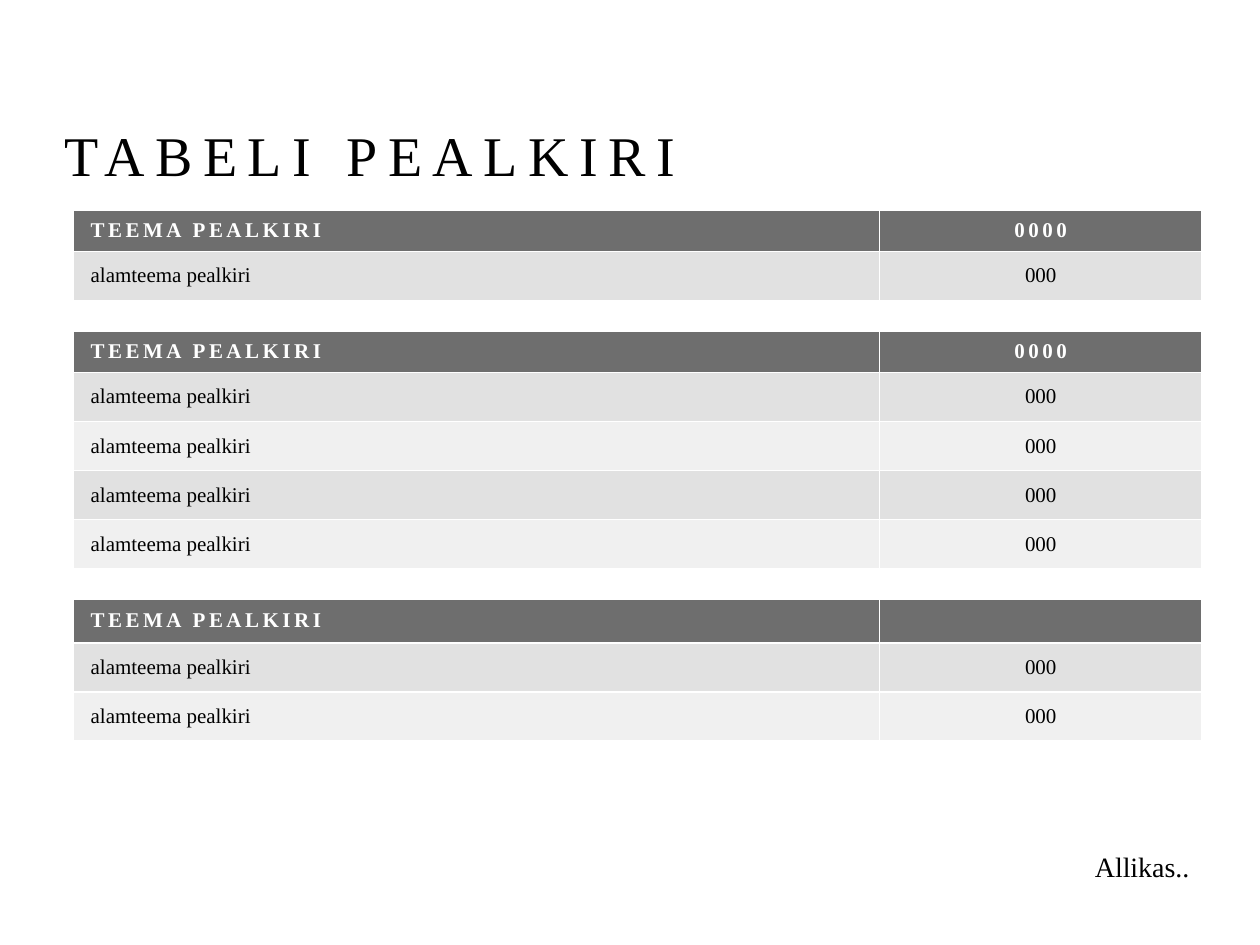
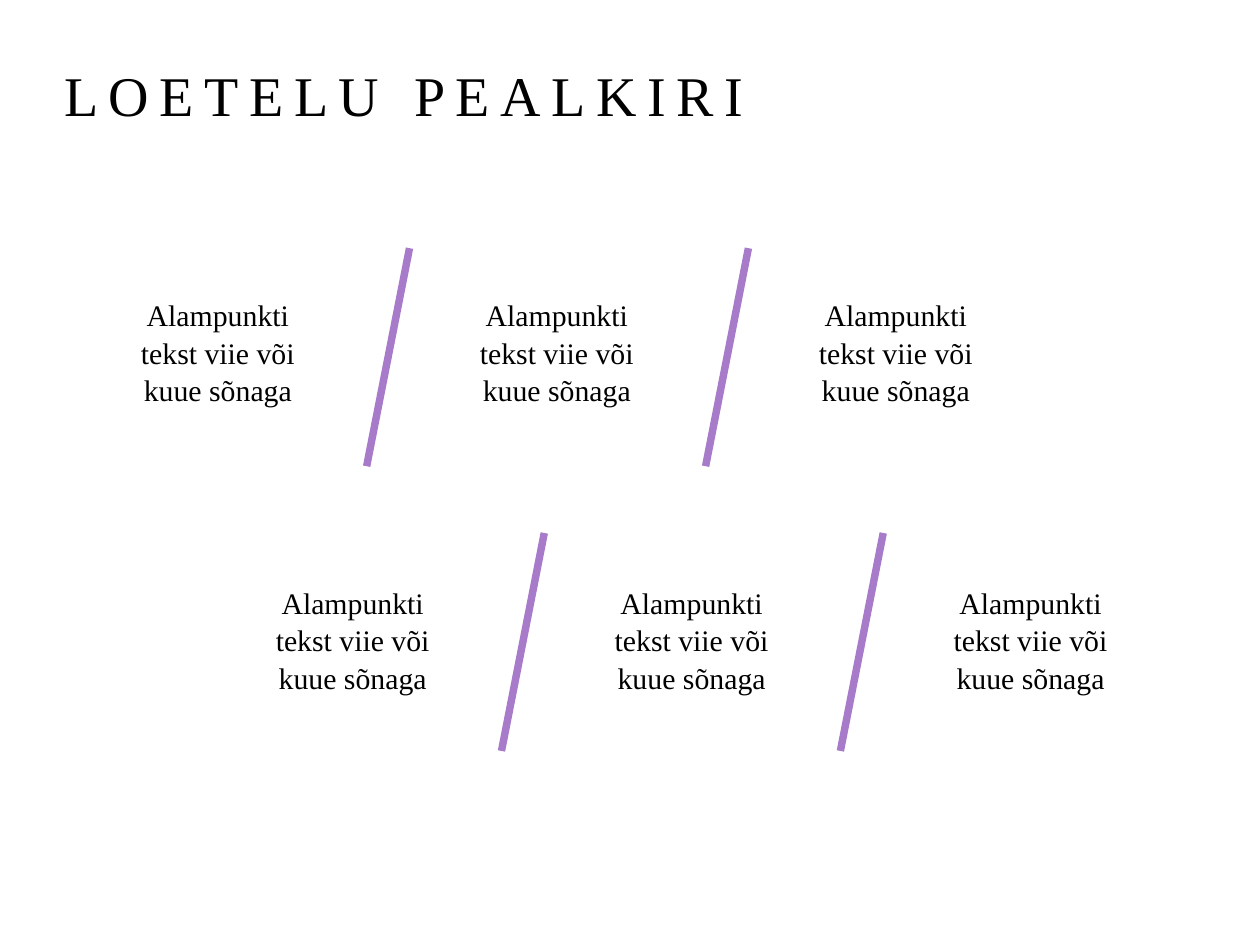
"""Build a table slide and a list slide in one plain style."""
from lxml import etree
from pptx import Presentation
from pptx.dml.color import RGBColor
from pptx.enum.shapes import MSO_CONNECTOR
from pptx.enum.text import MSO_ANCHOR, MSO_AUTO_SIZE, PP_ALIGN
from pptx.oxml.ns import qn
from pptx.util import Inches, Pt

LEFT, MID, RIGHT = PP_ALIGN.LEFT, PP_ALIGN.CENTER, PP_ALIGN.RIGHT
TOP, CENTRE, BASE = MSO_ANCHOR.TOP, MSO_ANCHOR.MIDDLE, MSO_ANCHOR.BOTTOM
FIT, FIXED = MSO_AUTO_SIZE.SHAPE_TO_FIT_TEXT, MSO_AUTO_SIZE.NONE
STRAIGHT = MSO_CONNECTOR.STRAIGHT
FONT = "Times New Roman"
BLACK, WHITE, PURPLE = "000000", "FFFFFF", "A77BCA"
HEAD, BANDS = "6E6E6E", ("E1E1E1", "F0F0F0")
WIDE, HIGH = 100, 75


def colour(code):
    """Turn a hex string into a colour."""
    return RGBColor.from_string(code)


def grid(*cells):
    """Turn grid columns or rows, ten to the inch, into lengths."""
    return [Inches(cell / 10) for cell in cells]


def write(frame, text, size=12, ink=BLACK, bold=False, gap=0, align=LEFT,
          lead=1.0):
    """Write each line of text as a formatted paragraph."""
    for i, line in enumerate(text.split("\n")):
        para = frame.paragraphs[0] if i == 0 else frame.add_paragraph()
        para.alignment, para.line_spacing = align, lead
        if not line:
            etree.SubElement(para._p, qn("a:endParaRPr"), sz=str(size * 100))
            continue
        run = para.add_run()
        run.text = line
        font = run.font
        font.name, font.size, font.bold = FONT, Pt(size), bold
        font.color.rgb = colour(ink)
        if gap:
            run._r.get_or_add_rPr().set("spc", str(gap * 100))


class Deck:
    """Hold the shared style and the current slide."""

    def __init__(self):
        """Start an empty deck."""
        self.show = Presentation()
        self.show.slide_width, self.show.slide_height = grid(WIDE, HIGH)
        self.slide = None

    def page(self, title, top):
        """Add a slide with its title."""
        self.slide = self.show.slides.add_slide(self.show.slide_layouts[5])
        head = self.slide.shapes.title
        head.left, head.top, head.width, head.height = grid(4.1, top, 91.5, 12.4)
        frame = head.text_frame
        frame.vertical_anchor, frame.auto_size = BASE, FIXED
        write(frame, title, size=32, gap=6)

    def text(self, text, x, y, w, h, anchor=CENTRE, fit=FIXED, **style):
        """Add a text box."""
        frame = self.slide.shapes.add_textbox(*grid(x, y, w, h)).text_frame
        frame.word_wrap, frame.auto_size = True, fit
        frame.vertical_anchor = anchor
        write(frame, text, **style)

    def line(self, x, y, end_x, end_y):
        """Add a thick straight line."""
        link = self.slide.shapes.add_connector(
            STRAIGHT, *grid(x, y, end_x, end_y))
        link.line.color.rgb, link.line.width = colour(PURPLE), Pt(4.25)
        etree.SubElement(link._element.spPr, qn("a:effectLst"))

    def table(self, rows, x, y, cols, heights):
        """Add a table with a dark head and banded rows."""
        table = self.slide.shapes.add_table(
            len(rows), len(cols), *grid(x, y, sum(cols), sum(heights))).table
        for col, width in zip(table.columns, grid(*cols)):
            col.width = width
        for i, row in enumerate(rows):
            table.rows[i].height = grid(heights[i])[0]
            look = {} if i else {"ink": WHITE, "bold": True, "gap": 2}
            for j, text in enumerate(row):
                cell = table.cell(i, j)
                cell.fill.solid()
                cell.fill.fore_color.rgb = colour(
                    BANDS[(i - 1) % 2] if i else HEAD)
                cell.margin_left, cell.margin_right = grid(1.4, 1.4)
                cell.margin_top, cell.margin_bottom = grid(0.7, 0.7)
                cell.vertical_anchor = CENTRE if i else TOP
                write(cell.text_frame, text, align=MID if j else LEFT, **look)


def tables(deck):
    """Stack three tables over a source line."""
    deck.page("TABELI PEALKIRI", 3)
    top = 16.7
    for total, count in (("0000", 1), ("0000", 4), ("", 2)):
        rows = [("TEEMA PEALKIRI", total)]
        rows += [("alamteema pealkiri", "000")] * count
        heights = [3.2] + [3.9] * count
        deck.table(rows, 5.8, top, (64, 25.6), heights)
        top += sum(heights) + 2.5
    deck.text("Allikas..", 30.1, 64.4, 65.3, 6.2, anchor=BASE,
              size=16, align=RIGHT, lead=1.2)


def points(deck):
    """Set two shifted rows of points, parted by slanted lines."""
    deck.page("LOETELU PEALKIRI", -1.8)
    step, shift = 26.9, 10.7
    for row, (bar, top) in enumerate(((19.7, 23.1), (42.3, 45.9))):
        for col in range(3):
            x = 9.1 + col * step + row * shift
            deck.text("Alampunkti\ntekst viie või\nkuue sõnaga", x, top,
                      16.4, 9.6, fit=FIT, size=17, align=MID, lead=1.05)
            if col < 2:
                deck.line(x + 23.4, bar, x + 20, bar + 17.3)


def main():
    """Build and save the deck."""
    deck = Deck()
    tables(deck)
    points(deck)
    deck.show.save("out.pptx")


if __name__ == "__main__":
    main()
